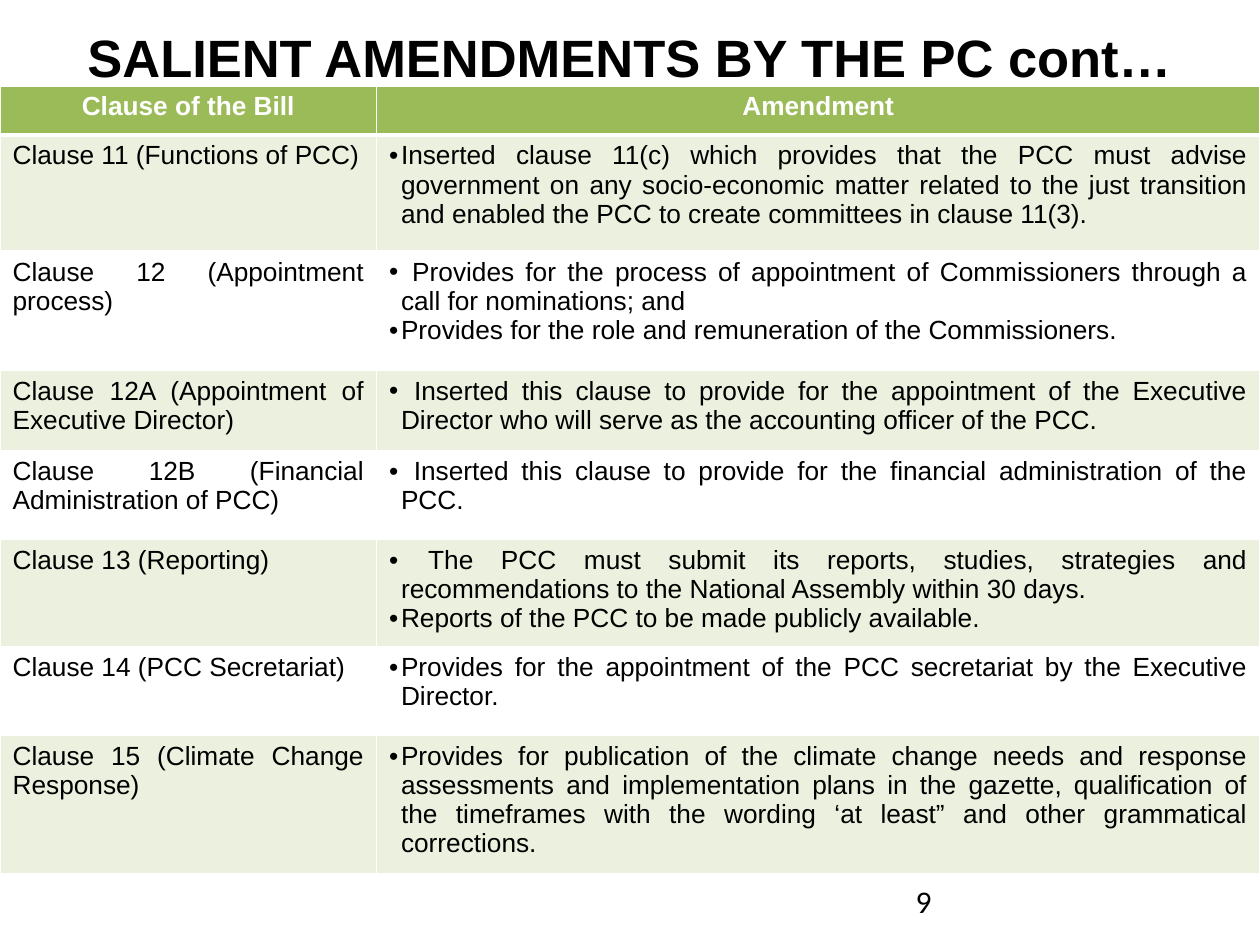
from dataclasses import dataclass

from lxml.etree import SubElement
from pptx import Presentation
from pptx.dml.color import RGBColor
from pptx.enum.text import MSO_ANCHOR, MSO_AUTO_SIZE, PP_ALIGN
from pptx.oxml.ns import qn
from pptx.util import Cm, Pt

WHITE, BLACK = "FFFFFF", "000000"
HEADER_GREEN, BAND_GREEN = "9BBB59", "EBF1DE"
COLUMN_WIDTHS = (7.59, 17.81)
HEADER_HEIGHT = 0.99
BULLET_INDENT = Cm(0.24)


@dataclass
class ClauseRow:
    clause: str
    amendments: list[str]
    height: float


CLAUSES = [
    ClauseRow("Clause 11 (Functions of PCC)", [
        "Inserted clause 11(c) which provides that the PCC must advise government on any "
        "socio-economic matter related to the just transition and enabled the PCC to create "
        "committees in clause 11(3)."], 2.34),
    ClauseRow("Clause 12 (Appointment process)", [
        " Provides for the process of appointment of Commissioners through a call for "
        "nominations; and ",
        "Provides for the role and remuneration of the Commissioners."], 2.4),
    ClauseRow("Clause 12A (Appointment of Executive Director)", [
        " Inserted this clause to provide for the appointment of the Executive Director who "
        "will serve as the accounting officer of the PCC."], 1.62),
    ClauseRow("Clause 12B (Financial Administration of PCC)", [
        " Inserted this clause to provide for the financial administration of the PCC."], 1.79),
    ClauseRow("Clause 13 (Reporting)", [
        " The PCC must submit its reports, studies, strategies and recommendations to the "
        "National Assembly within 30 days.",
        "Reports of the PCC to be made publicly available."], 2),
    ClauseRow("Clause 14 (PCC Secretariat)", [
        "Provides for the appointment of the PCC secretariat by the Executive Director."], 1.79),
    ClauseRow("Clause 15 (Climate Change Response)", [
        "Provides for publication of the climate change needs and response assessments and "
        "implementation plans in the gazette, qualification of the timeframes with the wording "
        "‘at least” and other grammatical corrections."], 2.59),
]


def rgb(color: str) -> RGBColor:
    return RGBColor.from_string(color)


def add_run(paragraph, text: str, size: float, color: str = BLACK,
            bold: bool = False, font_name: str = "Arial") -> None:
    run = paragraph.add_run()
    run.text = text
    run.font.name = font_name
    run.font.size = Pt(size)
    run.font.bold = bold
    run.font.color.rgb = rgb(color)


def add_bullet(paragraph) -> None:
    properties = paragraph._p.get_or_add_pPr()
    properties.set("marL", str(BULLET_INDENT))
    properties.set("indent", str(-BULLET_INDENT))
    SubElement(properties, qn("a:buFont"), typeface="Arial")
    SubElement(properties, qn("a:buChar"), char="•")


def set_borders(cell, bottom_width: float) -> None:
    properties = cell._tc.get_or_add_tcPr()
    for side, width in (("L", 1), ("R", 1), ("T", 1), ("B", bottom_width)):
        border = SubElement(properties, qn(f"a:ln{side}"), w=str(Pt(width)))
        fill = SubElement(border, qn("a:solidFill"))
        SubElement(fill, qn("a:srgbClr"), val=WHITE)


def fill_cell(cell, texts: list[str], fill: str, header: bool = False,
              bulleted: bool = False) -> None:
    set_borders(cell, bottom_width=3 if header else 1)
    cell.fill.solid()
    cell.fill.fore_color.rgb = rgb(fill)
    frame = cell.text_frame
    for index, text in enumerate(texts):
        paragraph = frame.add_paragraph() if index else frame.paragraphs[0]
        paragraph.alignment = PP_ALIGN.CENTER if header else PP_ALIGN.JUSTIFY
        if bulleted:
            add_bullet(paragraph)
        add_run(paragraph, text, 15, WHITE if header else BLACK, bold=header)


def add_title(slide, text: str) -> None:
    title = slide.shapes.title
    title.left, title.top, title.width, title.height = Cm(0), Cm(0.23), Cm(25.4), Cm(1.8)
    frame = title.text_frame
    frame.auto_size = MSO_AUTO_SIZE.NONE
    frame.vertical_anchor = MSO_ANCHOR.MIDDLE
    frame.paragraphs[0].alignment = PP_ALIGN.CENTER
    add_run(frame.paragraphs[0], text, 30, bold=True)


def add_amendments_table(slide) -> None:
    heights = [HEADER_HEIGHT] + [row.height for row in CLAUSES]
    table = slide.shapes.add_table(
        len(heights), len(COLUMN_WIDTHS), Cm(0), Cm(1.73),
        Cm(sum(COLUMN_WIDTHS)), Cm(sum(heights))).table
    for column, width in zip(table.columns, COLUMN_WIDTHS):
        column.width = Cm(width)
    for table_row, height in zip(table.rows, heights):
        table_row.height = Cm(height)

    for column, heading in enumerate(("Clause of the Bill", "Amendment")):
        fill_cell(table.cell(0, column), [heading], HEADER_GREEN, header=True)
    for number, row in enumerate(CLAUSES, start=1):
        band = BAND_GREEN if number % 2 else WHITE
        fill_cell(table.cell(number, 0), [row.clause], band)
        fill_cell(table.cell(number, 1), row.amendments, band, bulleted=True)


def add_page_number(slide, number: str) -> None:
    frame = slide.shapes.add_textbox(Cm(18.21), Cm(17.65), Cm(5.92), Cm(1.02)).text_frame
    frame.word_wrap = True
    add_run(frame.paragraphs[0], number, 18, font_name="Calibri")


def main() -> None:
    presentation = Presentation()
    presentation.slide_width, presentation.slide_height = Cm(25.4), Cm(19.05)
    slide = presentation.slides.add_slide(presentation.slide_layouts[5])
    add_title(slide, "SALIENT AMENDMENTS BY THE PC cont…")
    add_page_number(slide, "9")
    add_amendments_table(slide)
    presentation.save("out.pptx")


if __name__ == "__main__":
    main()
